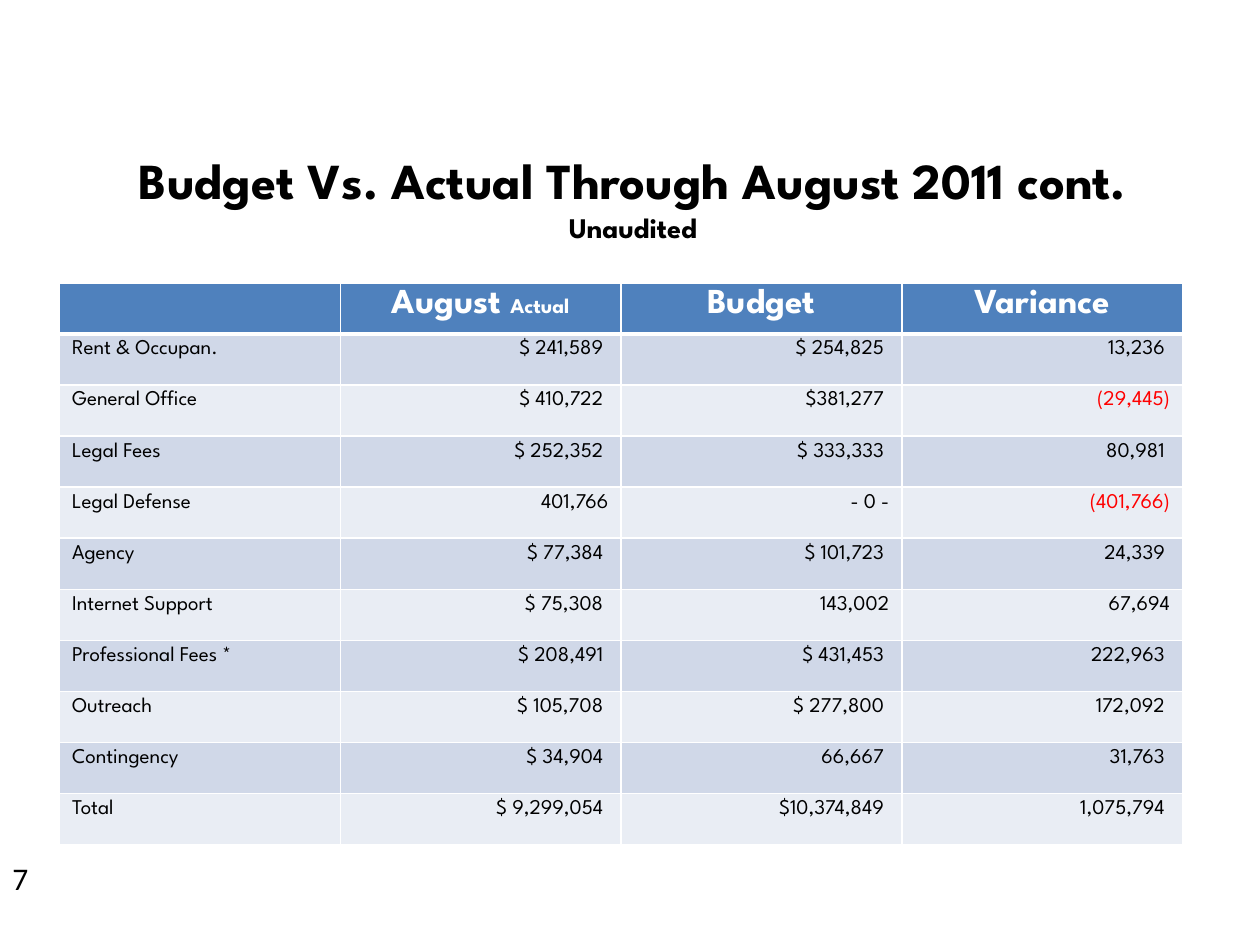
"""Build the budget versus actual slide."""
from copy import deepcopy
from dataclasses import dataclass

from lxml import etree
from pptx import Presentation, util as u
from pptx.dml.color import RGBColor
from pptx.enum import text
from pptx.oxml import ns


@dataclass(frozen=True)
class Theme:
    """Fonts, colours and type sizes of the slide."""
    face: str = "League Spartan"
    plain: str = "Calibri"
    ink: str = "000000"
    white: str = "FFFFFF"
    red: str = "FF0000"
    head: str = "4F81BD"
    bands: tuple = ("E9EDF4", "D0D8E8")
    title: float = 28.8
    sub: float = 16.2
    top: float = 20
    body: float = 12
    page: float = 18


THEME = Theme()
ALIGN = text.PP_ALIGN
HEADS = ["", "August Actual", "Budget", "Variance"]
ROWS = [
    ["Rent & Occupan.", "$ 241,589 ", "$ 254,825 ", "13,236 "],
    ["General Office", "$ 410,722 ", "$381,277 ", "(29,445)"],
    ["Legal Fees", "$ 252,352 ", "$ 333,333 ", "80,981 "],
    ["Legal Defense", "401,766", "- 0 -", "(401,766)"],
    ["Agency", "$ 77,384 ", "$ 101,723 ", "24,339 "],
    ["Internet Support", "$ 75,308 ", "143,002", "67,694"],
    ["Professional Fees *", "$ 208,491 ", "$ 431,453 ", "222,963 "],
    ["Outreach", "$ 105,708 ", "$ 277,800 ", "172,092 "],
    ["Contingency", "$ 34,904 ", "66,667 ", "31,763 "],
    ["Total", "$ 9,299,054 ", "$10,374,849 ", "1,075,794 "],
]


def style(run, size, color=THEME.ink, bold=False, face=THEME.face):
    """Format one run."""
    font = run.font
    font.name, font.size, font.bold = face, u.Pt(size), bold
    font.color.rgb = RGBColor.from_string(color)


def place(shape, left, top, width, height):
    """Set the place and size of a shape in centimetres."""
    shape.left, shape.top = u.Cm(left), u.Cm(top)
    shape.width, shape.height = u.Cm(width), u.Cm(height)


def add_title(slide):
    """Write the title and its smaller second line."""
    shape = slide.shapes.title
    place(shape, 0.53, 2.24, 24.46, 3.45)
    frame = shape.text_frame
    frame.text = "Budget Vs. Actual Through August 2011 cont.\vUnaudited"
    frame.word_wrap = True
    frame.auto_size = text.MSO_AUTO_SIZE.NONE
    frame.vertical_anchor = text.MSO_ANCHOR.MIDDLE
    para = frame.paragraphs[0]
    para.alignment = ALIGN.CENTER
    for run, size in zip(para.runs, (THEME.title, THEME.sub)):
        style(run, size, bold=True)
    gap = para._p.find(ns.qn("a:br"))
    gap.insert(0, deepcopy(para.runs[0]._r.rPr))


def edge(cell, side, width):
    """Draw one white border of a cell."""
    props = cell._tc.get_or_add_tcPr()
    line = etree.SubElement(props, ns.qn(f"a:ln{side}"), w=str(u.Pt(width)))
    fill = etree.SubElement(line, ns.qn("a:solidFill"))
    etree.SubElement(fill, ns.qn("a:srgbClr"), val=THEME.white)


def paint(cell, row):
    """Give a cell its borders and its band colour."""
    widths = {"L": 1, "R": 1, "T": 3 if row == 1 else 1, "B": 3 if row == 0 else 1}
    for side, width in widths.items():
        edge(cell, side, width)
    cell.fill.solid()
    color = THEME.bands[row % 2] if row else THEME.head
    cell.fill.fore_color.rgb = RGBColor.from_string(color)


def fill_head(cell, words):
    """Write a column head with any second word smaller."""
    para = cell.text_frame.paragraphs[0]
    para.alignment = ALIGN.CENTER
    main, space, rest = words.partition(" ")
    for part, size in ((main + space, THEME.top), (rest, THEME.body)):
        if part:
            run = para.add_run()
            run.text = part
            style(run, size, THEME.white, True)


def fill_body(cell, words, col):
    """Write a label or a figure, red when it is negative."""
    cell.text_frame.text = words
    para = cell.text_frame.paragraphs[0]
    para.alignment = ALIGN.RIGHT if col else ALIGN.LEFT
    style(para.runs[0], THEME.body, THEME.red if words.startswith("(") else THEME.ink)


def add_budget(slide):
    """Add the budget table."""
    data = [HEADS] + ROWS
    wide, high = 5.66, 1.03
    frame = slide.shapes.add_table(
        len(data), len(HEADS), u.Cm(1.2), u.Cm(5.7),
        u.Cm(wide * len(HEADS)), u.Cm(high * len(data)))
    grid = frame.table
    for col in grid.columns:
        col.width = u.Cm(wide)
    for row, line in enumerate(data):
        grid.rows[row].height = u.Cm(high)
        for col, words in enumerate(line):
            cell = grid.cell(row, col)
            paint(cell, row)
            if row:
                fill_body(cell, words, col)
            else:
                fill_head(cell, words)


def add_page(slide):
    """Add the page number."""
    box = slide.shapes.add_textbox(u.Cm(0), u.Cm(17.2), u.Cm(1.88), u.Cm(1.02))
    frame = box.text_frame
    frame.word_wrap = True
    frame.text = "7"
    style(frame.paragraphs[0].runs[0], THEME.page, face=THEME.plain)


def main():
    """Build and save the slide."""
    deck = Presentation()
    deck.slide_width, deck.slide_height = u.Cm(25.4), u.Cm(19.05)
    slide = deck.slides.add_slide(deck.slide_layouts[5])
    add_title(slide)
    add_budget(slide)
    add_page(slide)
    deck.save("out.pptx")


if __name__ == "__main__":
    main()
